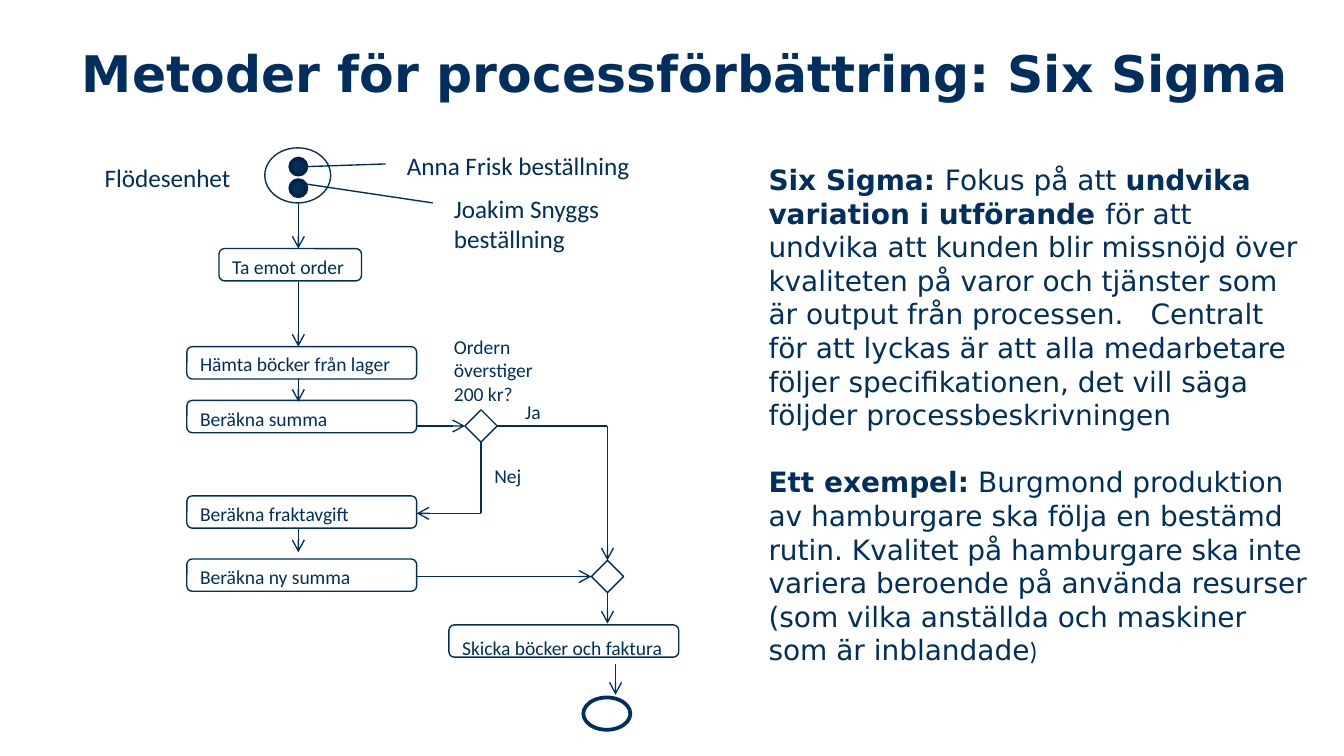
from dataclasses import dataclass

from pptx import Presentation
from pptx.dml.color import RGBColor
from pptx.enum.shapes import MSO_CONNECTOR, MSO_SHAPE
from pptx.enum.text import MSO_ANCHOR, PP_ALIGN
from pptx.oxml.ns import qn
from pptx.util import Inches, Pt
from lxml import etree

ROUND = MSO_SHAPE.ROUNDED_RECTANGLE
DIAMOND = MSO_SHAPE.DIAMOND
OVAL = MSO_SHAPE.OVAL
STRAIGHT = MSO_CONNECTOR.STRAIGHT
TOP = MSO_ANCHOR.TOP
LEFT = PP_ALIGN.LEFT

COLORS = {"navy": "002F5F", "dark": "002346", "white": "FFFFFF"}
SANS = "DejaVu Sans"
BODY = "Calibri"
WIDTH = 10
STEP_H = 0.24
FLOW_X = 2.22   # main flow axis
TEST_X = 3.58   # axis of the first decision
SEND_X = 4.52   # axis of the second decision


@dataclass
class Step:
    left: float
    top: float
    width: float
    label: str
    drop: float = 0.03
    spacing: float = 0.8


@dataclass
class Link:
    x1: float
    y1: float
    x2: float
    y2: float
    arrow: bool = True


@dataclass
class Note:
    left: float
    top: float
    width: float
    height: float
    text: str
    size: float = 10.5
    spacing: float = 1.0


@dataclass
class Part:
    text: str
    bold: bool = False
    size: float = 15
    font: str = SANS
    track: int = 0  # extra letter spacing, hundredths of a point


def paint(name: str) -> RGBColor:
    return RGBColor.from_string(COLORS[name])


def add_run(para, part: Part) -> None:
    run = para.add_run()
    run.text = part.text
    font = run.font
    font.name, font.size, font.bold = part.font, Pt(part.size), part.bold
    font.color.rgb = paint("navy")
    if part.track:
        font._element.set("spc", str(part.track))


def add_frame(slide, left: float, top: float, width: float, height: float):
    box = slide.shapes.add_textbox(
        Inches(left), Inches(top), Inches(width), Inches(height))
    box.text_frame.word_wrap = True
    return box.text_frame


def add_note(slide, note: Note) -> None:
    frame = add_frame(slide, note.left, note.top, note.width, note.height)
    para = frame.paragraphs[0]
    para.line_spacing = note.spacing
    add_run(para, Part(note.text, size=note.size, font=BODY))


def add_node(slide, kind, left: float, top: float, width: float, height: float,
             fill: str = "white", line: str = "navy", weight: float = 0.75) -> None:
    node = slide.shapes.add_shape(
        kind, Inches(left), Inches(top), Inches(width), Inches(height))
    node.shadow.inherit = False
    node.fill.solid()
    node.fill.fore_color.rgb = paint(fill)
    node.line.color.rgb = paint(line)
    node.line.width = Pt(weight)


def add_link(slide, link: Link) -> None:
    wire = slide.shapes.add_connector(
        STRAIGHT, Inches(link.x1), Inches(link.y1), Inches(link.x2), Inches(link.y2))
    wire.line.color.rgb = paint("navy")
    wire.line.width = Pt(0.75)
    if link.arrow:
        etree.SubElement(wire.line._get_or_add_ln(), qn("a:tailEnd"), type="arrow")
    etree.SubElement(wire._element.spPr, qn("a:effectLst"))


STEPS = [
    Step(1.63, 1.85, 1.06, "Ta emot order", 0.06, 0.6),
    Step(1.39, 2.58, 1.71, "Hämta böcker från lager", 0.02),
    Step(1.39, 2.98, 1.71, "Beräkna summa"),
    Step(1.39, 3.69, 1.71, "Beräkna fraktavgift"),
    Step(1.39, 4.16, 1.71, "Beräkna ny summa"),
    Step(3.34, 4.65, 1.71, "Skicka böcker och faktura", 0.07),
]

LINKS = [
    # Down the main flow
    Link(FLOW_X, 1.51, FLOW_X, 1.85),
    Link(FLOW_X, 2.1, FLOW_X, 2.58),
    Link(FLOW_X, 2.81, FLOW_X, 2.99),
    Link(FLOW_X, 3.93, FLOW_X, 4.11),
    # Through the decisions
    Link(3.1, 3.17, 3.46, 3.17),
    Link(3.69, 3.17, SEND_X, 3.17, False),
    Link(SEND_X, 3.17, SEND_X, 4.17),
    Link(TEST_X, 3.29, TEST_X, 3.82, False),
    Link(TEST_X, 3.82, 3.1, 3.82),
    Link(3.1, 4.29, 4.4, 4.29),
    # To the end
    Link(SEND_X, 4.41, SEND_X, 4.64),
    Link(4.58, 4.94, 4.58, 5.17),
    # From the orders to their names
    Link(2.28, 1.24, 2.87, 1.22, False),
    Link(2.28, 1.37, 3.22, 1.51, False),
]

NOTES = [
    Note(0.68, 1.16, 1.18, 0.33, "Flödesenhet", 13.5),
    Note(2.93, 1.07, 2.36, 0.33, "Anna Frisk beställning", 13.5),
    Note(3.28, 1.39, 1.54, 0.56, "Joakim Snyggs beställning", 13.5),
    Note(3.28, 2.44, 0.83, 0.63, "Ordern överstiger 200 kr?"),
    Note(3.81, 2.93, 0.83, 0.28, "Ja"),
    Note(3.58, 3.4, 0.83, 0.28, "Nej"),
]

PARAS = [
    [
        Part("Six Sigma: ", True),
        Part("Fokus på att "),
        Part("undvika variation i utförande ", True),
        Part("för att undvika att kunden blir missnöjd över kvaliteten på varor "
             "och tjänster som är output från processen."),
        Part(" ", track=950),
        Part("Centralt för att lyckas är att alla medarbetare följer "
             "specifikationen, det vill säga följder processbeskrivningen"),
    ],
    [
        Part("Ett exempel:", True),
        Part(" Burgmond produktion av hamburgare ska följa en bestämd rutin. "
             "Kvalitet på hamburgare ska inte variera beroende på använda resurser "
             "(som vilka anställda och maskiner som är inblandade"),
        Part(")", size=13.5, font=BODY),
    ],
]


def main() -> None:
    deck = Presentation()
    deck.slide_width, deck.slide_height = Inches(WIDTH), Inches(WIDTH * 9 / 16)
    slide = deck.slides.add_slide(deck.slide_layouts[5])

    # Title
    title = slide.shapes.title
    title.left, title.top = Inches(0.51), Inches(0.26)
    title.width, title.height = Inches(9.34), Inches(0.94)
    title.text_frame.vertical_anchor = TOP
    head = title.text_frame.paragraphs[0]
    head.alignment = LEFT
    add_run(head, Part("Metoder för processförbättring: Six Sigma", True, 27))

    # Start, decisions and end
    add_node(slide, OVAL, 1.97, 1.1, 0.49, 0.41)
    for top in (1.18, 1.34):
        add_node(slide, OVAL, 2.16, top, 0.12, 0.12, "navy", "dark", 2)
    for left, top in ((3.46, 3.05), (4.4, 4.17)):
        add_node(slide, DIAMOND, left, top, STEP_H, STEP_H)
    add_node(slide, OVAL, 4.34, 5.19, 0.35, STEP_H, weight=2)

    # Steps, links and labels
    for step in STEPS:
        add_node(slide, ROUND, step.left, step.top, step.width, STEP_H)
        add_note(slide, Note(step.left, step.top + step.drop, step.width, STEP_H,
                             step.label, spacing=step.spacing))
    for link in LINKS:
        add_link(slide, link)
    for note in NOTES:
        add_note(slide, note)

    # Body text
    frame = add_frame(slide, 5.62, 1.16, 4.23, 3.89)
    for index, parts in enumerate(PARAS):
        para = frame.add_paragraph() if index else frame.paragraphs[0]
        if index:
            para.space_before = Pt(18)
        for part in parts:
            add_run(para, part)

    deck.save("out.pptx")


if __name__ == "__main__":
    main()
